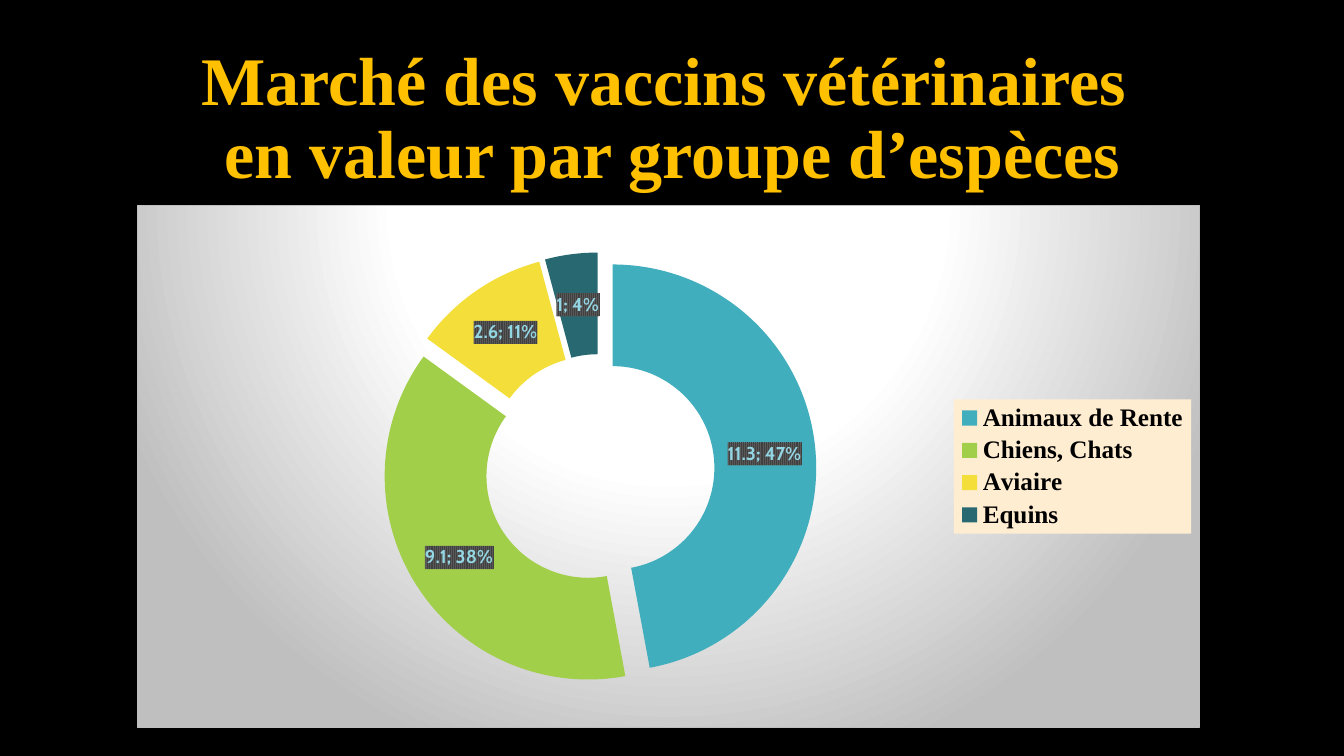
from lxml.etree import fromstring
from pptx import Presentation
from pptx.chart.data import CategoryChartData
from pptx.dml.color import RGBColor
from pptx.enum.chart import XL_CHART_TYPE as ChartType, XL_LEGEND_POSITION as LegendPosition
from pptx.enum.text import MSO_ANCHOR as Anchor, PP_ALIGN as Align
from pptx.oxml.ns import nsdecls
from pptx.util import Inches, Pt

PX = Inches(1) / 100.8
COLORS = {
    "background": "000000", "title": "FFC000", "label": "94D7E4", "legend_text": "000000",
    "legend_fill": "FFEDD1", "label_dark": "404040", "label_light": "595959",
    "panel_light": "FFFFFF", "panel_dark": "BFBFBF",
}
# species group: (value, colour)
SPECIES = {
    "Animaux de Rente": (11.3, "41AEBD"),
    "Chiens, Chats": (9.1, "A2CF49"),
    "Aviaire": (2.6, "F4DE3A"),
    "Equins": (1, "276871"),
}


def rgb(name):
    return RGBColor.from_string(COLORS[name])


def emu(box):
    return [round(length * PX) for length in box]


def chart_xml(tag, content):
    return fromstring(f'<c:{tag} {nsdecls("c", "a")}>{content}</c:{tag}>')


def srgb(name):
    return f'<a:srgbClr val="{COLORS[name]}"/>'


def layout_xml(x, y, w, h, target=""):
    """Manual layout in fractions of the chart area."""
    modes = '<c:xMode val="edge"/><c:yMode val="edge"/>'
    sizes = "".join(f'<c:{key} val="{value}"/>' for key, value in zip("xywh", (x, y, w, h)))
    return chart_xml("layout", f"<c:manualLayout>{target}{modes}{sizes}</c:manualLayout>")


def style_font(font, size, color, name, bold=True):
    font.size, font.name, font.bold = Pt(size), name, bold
    font.color.rgb = rgb(color)


def add_title(slide, box):
    frame = slide.shapes.add_textbox(*emu(box)).text_frame
    frame.word_wrap = True
    frame.vertical_anchor = Anchor.MIDDLE
    title = frame.paragraphs[0]
    title.text = "Marché des vaccins vétérinaires \ven valeur par groupe d’espèces"
    title.alignment = Align.CENTER
    title.line_spacing = 0.9
    style_font(title.font, 48.6, "title", "Times New Roman")


def fill_panel(chart):
    stops = "".join(
        f'<a:gs pos="{position * 1000}">{srgb(name)}</a:gs>'
        for position, name in ((0, "panel_light"), (46, "panel_light"), (100, "panel_dark")))
    panel = chart_xml("spPr", (
        f'<a:gradFill><a:gsLst>{stops}</a:gsLst><a:path path="circle">'
        '<a:fillToRect l="50000" t="-80000" r="50000" b="180000"/></a:path></a:gradFill>'
        f'<a:ln w="9525"><a:solidFill>{srgb("panel_dark")}</a:solidFill></a:ln>'))
    chart.element.find("{*}txPr").addprevious(panel)


def style_rings(chart):
    series = chart.plots[0].series[0]
    for index, (_, color) in enumerate(SPECIES.values()):
        fill = series.points[index].format.fill
        fill.solid()
        fill.fore_color.rgb = RGBColor.from_string(color)
    ring = chart.element.find(".//{*}ser")
    ring.find("{*}dPt").addprevious(fromstring(f'<c:explosion {nsdecls("c")} val="13"/>'))

    labels = series.data_labels
    labels.show_value = labels.show_percentage = True
    style_font(labels.font, 13.3, "label", "Cabin")
    label_list = ring.find("{*}dLbls")
    label_list.find("{*}txPr").addprevious(chart_xml("spPr", (
        f'<a:pattFill prst="narVert"><a:fgClr>{srgb("label_dark")}</a:fgClr>'
        f'<a:bgClr>{srgb("label_light")}</a:bgClr></a:pattFill>')))
    label_list.find("{*}showBubbleSize").addnext(chart_xml("separator", "; "))


def style_legend(chart):
    chart.has_legend = True
    chart.legend.position = LegendPosition.RIGHT
    chart.legend.include_in_layout = False
    style_font(chart.legend.font, 18, "legend_text", "Times New Roman")
    legend = chart.element.find(".//{*}legend")
    legend.find("{*}legendPos").addnext(layout_xml(0.77, 0.39, 0.23, 0.39))
    legend.find("{*}txPr").addprevious(
        chart_xml("spPr", f'<a:solidFill>{srgb("legend_fill")}</a:solidFill>'))


def add_market_chart(slide, box):
    data = CategoryChartData()
    data.categories = list(SPECIES)
    data.add_series("Series 1", [value for value, _ in SPECIES.values()])
    chart = slide.shapes.add_chart(ChartType.DOUGHNUT, *emu(box), data).chart
    chart.has_title = False
    chart.plots[0].vary_by_categories = True
    style_font(chart.font, 10, "label", "Cabin", bold=False)
    plot_area = chart.element.find(".//{*}plotArea")
    for automatic in plot_area.findall("{*}layout"):
        plot_area.remove(automatic)
    plot_area.insert(0, layout_xml(0.23, 0.09, 0.41, 0.83, '<c:layoutTarget val="inner"/>'))
    fill_panel(chart)
    style_rings(chart)
    style_legend(chart)


def main():
    deck = Presentation()
    deck.slide_width, deck.slide_height = emu((1344, 756))
    slide = deck.slides.add_slide(deck.slide_layouts[6])
    slide.background.fill.solid()
    slide.background.fill.fore_color.rgb = rgb("background")
    add_title(slide, (93, 47, 1159, 146))
    add_market_chart(slide, (137, 205, 1063, 523))
    deck.save("out.pptx")


if __name__ == "__main__":
    main()
